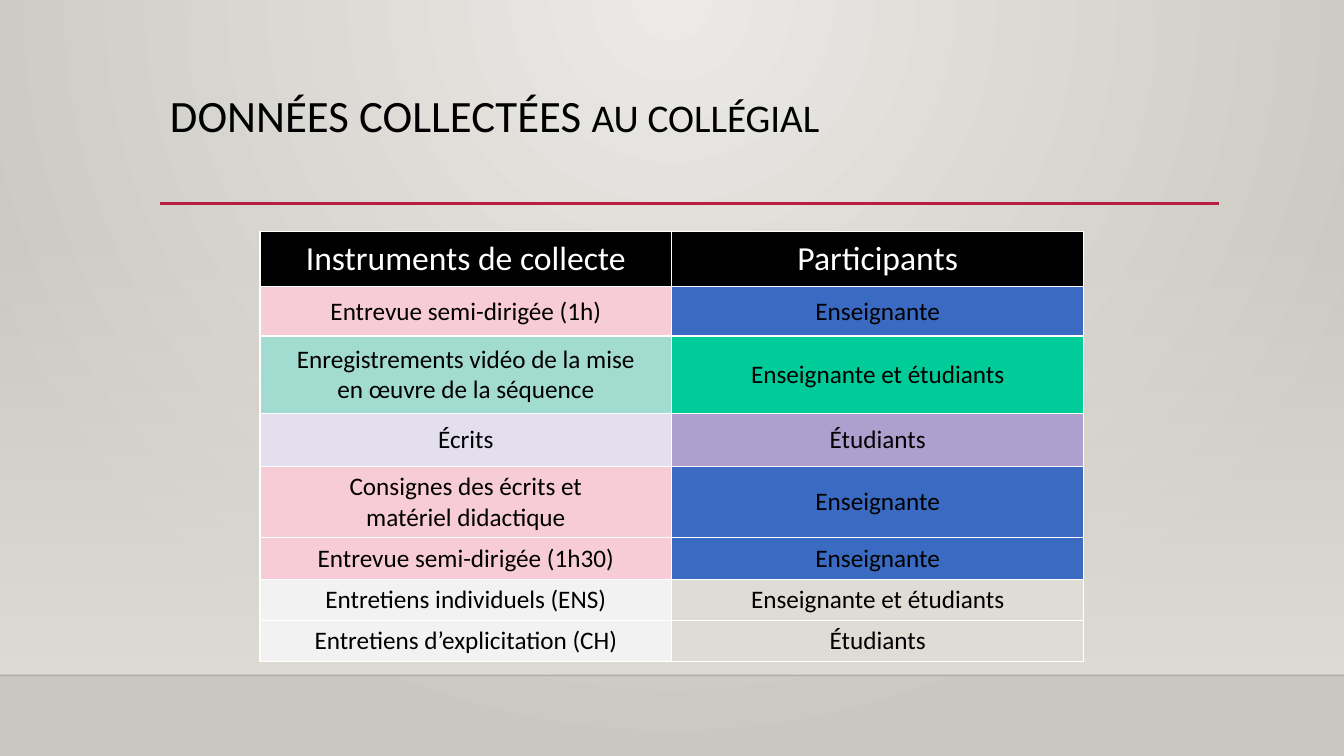
from pptx import Presentation
from pptx.dml.color import RGBColor
from pptx.enum.shapes import MSO_CONNECTOR, MSO_SHAPE
from pptx.enum.text import MSO_ANCHOR, MSO_AUTO_SIZE, PP_ALIGN
from pptx.oxml import parse_xml
from pptx.oxml.ns import nsdecls, qn
from pptx.util import Cm, Pt

STRAIGHT = MSO_CONNECTOR.STRAIGHT
RECT = MSO_SHAPE.RECTANGLE
TOP, MIDDLE = MSO_ANCHOR.TOP, MSO_ANCHOR.MIDDLE
LEFT, CENTER = PP_ALIGN.LEFT, PP_ALIGN.CENTER
NO_FIT = MSO_AUTO_SIZE.NONE

BLACK, WHITE = "000000", "FFFFFF"
PINK, BLUE = "F7CCD6", "3A6AC1"
PALE, SAND = "F2F2F2", "DFDBD5"

ROWS = [
    (1.4, "Instruments de collecte", BLACK, "Participants", BLACK),
    (1.24, "Entrevue semi-dirigée (1h)", PINK, "Enseignante", BLUE),
    (1.96, "Enregistrements vidéo de la mise\nen œuvre de la séquence", "A2DBCF",
     "Enseignante et étudiants", "00CC99"),
    (1.32, "Écrits", "E4DFEF", "Étudiants", "AF9FCF"),
    (1.8, "Consignes des écrits et\nmatériel didactique", PINK, "Enseignante", BLUE),
    (1.04, "Entrevue semi-dirigée (1h30)", PINK, "Enseignante", BLUE),
    (1.04, "Entretiens individuels (ENS)", PALE, "Enseignante et étudiants", SAND),
    (1.04, "Entretiens d’explicitation (CH)", PALE, "Étudiants", SAND),
]


def color(code):
    return RGBColor.from_string(code)


class Deck:
    font = "Calibri"

    def __init__(self, wide, high):
        self.prs = Presentation()
        self.prs.slide_width, self.prs.slide_height = Cm(wide), Cm(high)
        self.slide = self.prs.slides.add_slide(self.prs.slide_layouts[5])
        self.shapes = self.slide.shapes

    def blend(self, fill, owner, stops, shade):
        fill.solid()
        marks = "".join(
            f'<a:gs pos="{pos * 1000}"><a:srgbClr val="{code}">'
            f'<a:alpha val="{alpha * 1000}"/></a:srgbClr></a:gs>'
            for pos, code, alpha in stops)
        grad = parse_xml(f'<a:gradFill {nsdecls("a")} rotWithShape="1">'
                         f'<a:gsLst>{marks}</a:gsLst>{shade}</a:gradFill>')
        solid = owner.find(".//" + qn("a:solidFill"))
        solid.getparent().replace(solid, grad)

    def back(self, inner, outer):
        shade = ('<a:path path="circle"><a:fillToRect l="43000" t="0" '
                 'r="43000" b="100000"/></a:path>')
        self.blend(self.slide.background.fill, self.slide.element,
                   [(0, inner, 100), (100, outer, 100)], shade)

    def band(self, x, y, wide, high, code):
        box = self.shapes.add_shape(RECT, Cm(x), Cm(y), Cm(wide), Cm(high))
        box.shadow.inherit = False
        box.line.fill.background()
        self.blend(box.fill, box.element, [(0, code, 0), (100, code, 100)],
                   '<a:lin ang="5400000" scaled="0"/>')

    def rule(self, x, y, end, code, width, alpha=100):
        line = self.shapes.add_connector(STRAIGHT, Cm(x), Cm(y), Cm(end), Cm(y))
        line.line.color.rgb = color(code)
        line.line.width = Pt(width)
        props = line.element.spPr
        tint = props.find(".//" + qn("a:srgbClr"))
        tint.append(parse_xml(f'<a:alpha {nsdecls("a")} val="{alpha * 1000}"/>'))
        props.append(parse_xml(f'<a:effectLst {nsdecls("a")}/>'))

    def run(self, para, text, size, code):
        run = para.add_run()
        run.text = text
        run.font.name, run.font.size = self.font, Pt(size)
        run.font.color.rgb = color(code)

    def title(self, x, y, wide, high, parts):
        box = self.shapes.title
        box.left, box.top, box.width, box.height = Cm(x), Cm(y), Cm(wide), Cm(high)
        frame = box.text_frame
        frame.word_wrap, frame.auto_size = True, NO_FIT
        frame.vertical_anchor = TOP
        para = frame.paragraphs[0]
        para.alignment, para.line_spacing = LEFT, 0.9
        for text, size in parts:
            self.run(para, text, size, BLACK)
        box.element.getparent().append(box.element)

    def cell(self, cell, text, size, ink, fill):
        props = cell._tc.get_or_add_tcPr()
        for side in "LRTB":
            props.append(parse_xml(
                f'<a:ln{side} {nsdecls("a")} w="12700"><a:solidFill>'
                f'<a:srgbClr val="{WHITE}"/></a:solidFill></a:ln{side}>'))
        cell.fill.solid()
        cell.fill.fore_color.rgb = color(fill)
        cell.vertical_anchor = MIDDLE
        para = cell.text_frame.paragraphs[0]
        para.alignment = CENTER
        for num, part in enumerate(text.split("\n")):
            if num:
                para.add_line_break()
            self.run(para, part, size, ink)

    def table(self, x, y, wide, rows):
        high = sum(row[0] for row in rows)
        grid = self.shapes.add_table(len(rows), 2, Cm(x), Cm(y), Cm(wide), Cm(high)).table
        for col in grid.columns:
            col.width = Cm(wide / 2)
        for num, (tall, tool, light, who, dark) in enumerate(rows):
            grid.rows[num].height = Cm(tall)
            size, ink = (18, BLACK) if num else (24, WHITE)
            self.cell(grid.cell(num, 0), tool, size, ink, light)
            self.cell(grid.cell(num, 1), who, size, ink, dark)


def main():
    deck = Deck(33.87, 19.05)
    deck.back("ECEAE7", "CAC7C1")
    deck.band(0, 5.61, 33.87, 11.41, SAND)
    deck.rule(0, 17.02, 33.87, "000001", 1, 20)
    deck.rule(4.03, 5.13, 30.73, "B71E42", 2.5)
    deck.title(4.03, 2.24, 26.67, 2.92,
               [("DONNÉES COLLECTÉES ", 32), ("AU COLLÉGIAL", 28)])
    deck.table(6.55, 5.83, 20.76, ROWS)
    deck.prs.save("out.pptx")


if __name__ == "__main__":
    main()
